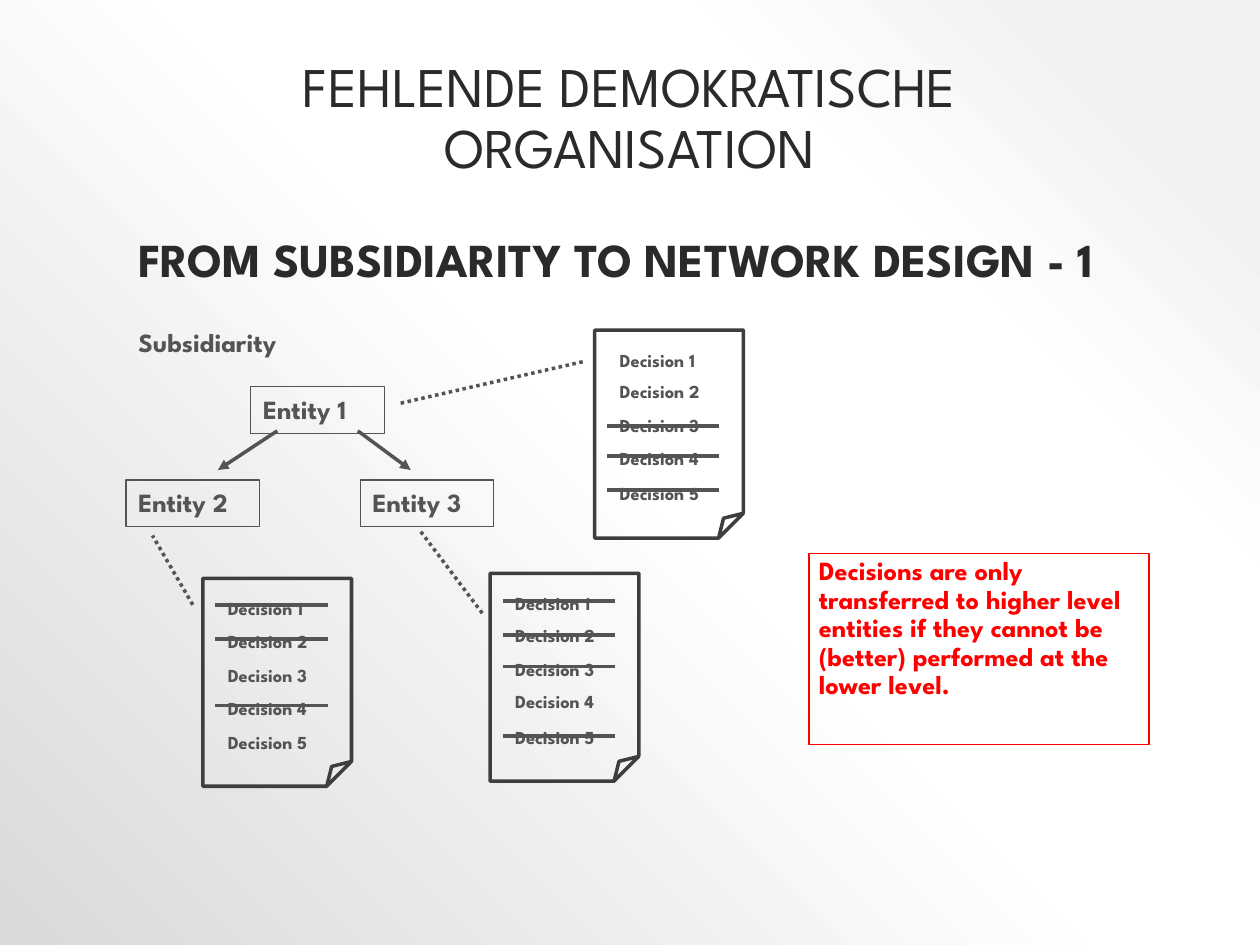
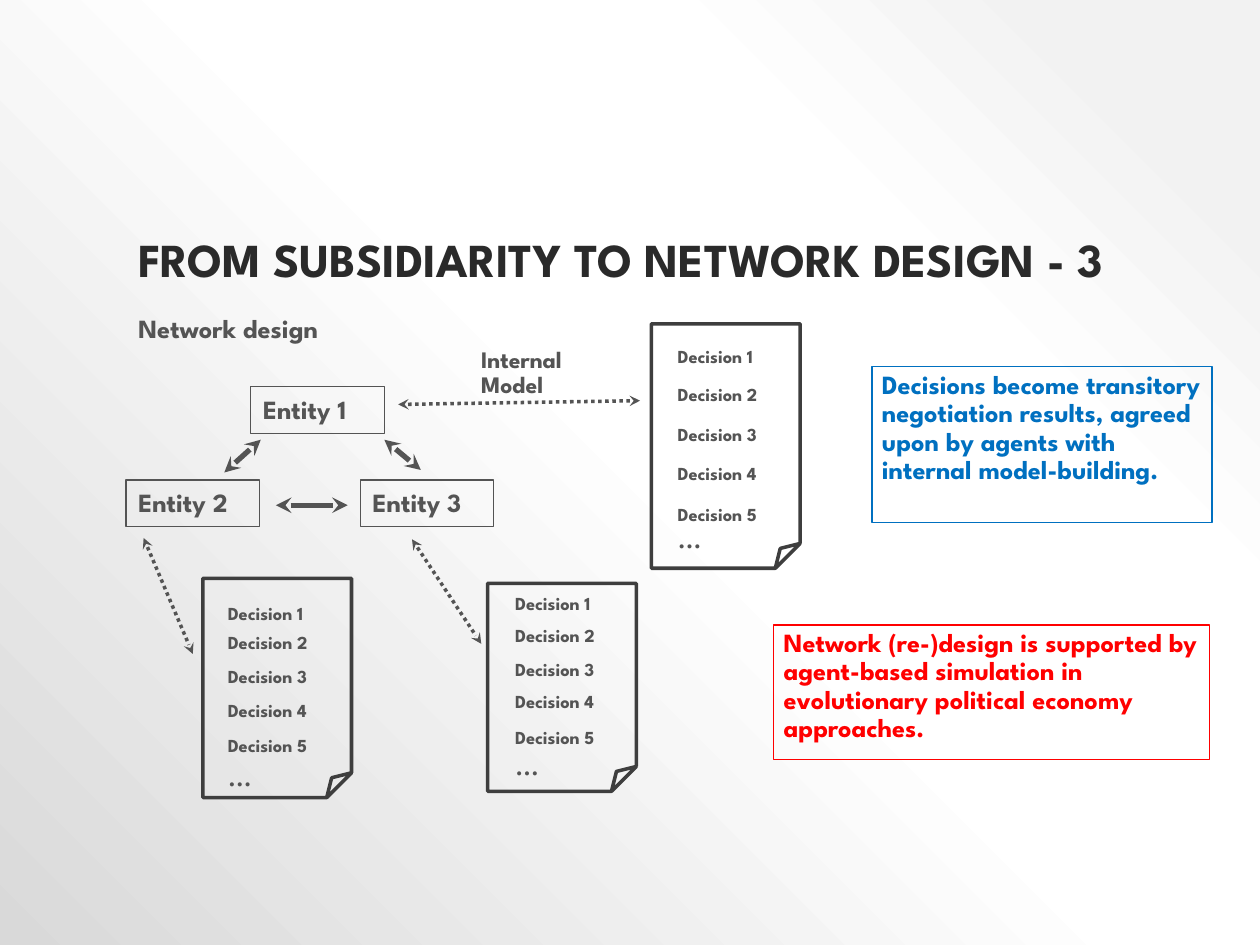
from lxml import etree
from pptx import Presentation
from pptx import oxml
from pptx.dml.color import RGBColor
from pptx.enum import dml, shapes, text
from pptx.oxml import ns
from pptx.util import Inches, Pt

FONT = "League Spartan"
DARK = RGBColor(0x2A, 0x2A, 0x2A)
GRAY = RGBColor(0x54, 0x54, 0x54)
SHEET_LINE = RGBColor(0x3E, 0x3E, 0x3E)
RED = RGBColor(0xFF, 0x00, 0x00)
BLUE = RGBColor(0x00, 0x70, 0xC0)

BACKGROUND_STOPS = [(10, "F2F2F2"), (28, "FFFFFF"), (48, "FFFFFF"), (100, "D9D9D9")]
BACKGROUND = (
    f'<p:bg {ns.nsdecls("p", "a")}><p:bgPr><a:gradFill rotWithShape="1"><a:gsLst>'
    + "".join(f'<a:gs pos="{position * 1000}"><a:srgbClr val="{color}"/></a:gs>'
              for position, color in BACKGROUND_STOPS)
    + '</a:gsLst><a:path path="circle"><a:fillToRect l="100000" b="100000"/></a:path>'
    '</a:gradFill><a:effectLst/></p:bgPr></p:bg>'
)

ENTITIES = [("Entity 1", 1.99, 3.07), ("Entity 2", 1, 3.81), ("Entity 3", 2.86, 3.81)]

# Sheets: frame, left edge of the text, tops of the decisions,
# heights of the strike lines, top of the ellipsis
# Links: start, end, width, dotted, arrowhead at start, arrowhead at end
SLIDES = [
    {
        "heading": "FROM SUBSIDIARITY TO NETWORK DESIGN - 1",
        "label": ("Subsidiarity", (1, 2.57, 1.8, 0.35)),
        "sheets": [
            ((4.72, 2.62, 1.18, 1.65), 4.82, [2.74, 2.99, 3.26, 3.52, 3.8],
             [3.38, 3.62, 3.89], None),
            ((3.89, 4.55, 1.18, 1.65), 3.99, [4.67, 4.92, 5.19, 5.45, 5.73],
             [4.77, 5.04, 5.29, 5.84], None),
            ((1.61, 4.59, 1.18, 1.65), 1.71, [4.71, 4.97, 5.24, 5.5, 5.77],
             [4.8, 5.07, 5.6], None),
        ],
        "links": [
            ((2.2, 3.42), (1.73, 3.73), 2, False, None, "triangle"),
            ((2.84, 3.42), (3.26, 3.73), 2, False, None, "triangle"),
            ((3.18, 3.2), (4.63, 2.87), 2, True, None, None),
            ((3.34, 4.22), (3.83, 4.87), 2, True, None, None),
            ((1.53, 4.8), (1.21, 4.25), 2, True, None, None),
        ],
        "notes": [
            ("Decisions are only transferred to higher level entities if they "
             "cannot be (better) performed at the lower level.",
             (6.42, 4.39, 2.7, 1.52), RED),
        ],
    },
    {
        "heading": "FROM SUBSIDIARITY TO NETWORK DESIGN - 3",
        "label": ("Network design", (1, 2.46, 1.83, 0.4)),
        "sheets": [
            ((5.17, 2.57, 1.18, 1.94), 5.28, [2.71, 3.01, 3.33, 3.64, 3.96], [], 4.09),
            ((3.87, 4.63, 1.18, 1.65), 3.99, [4.67, 4.92, 5.19, 5.45, 5.73], [], 5.89),
            ((1.61, 4.59, 1.18, 1.74), 1.71, [4.75, 4.98, 5.25, 5.52, 5.8], [], 5.98),
        ],
        "links": [
            ((3.16, 3.21), (5.08, 3.18), 2, True, "stealth", "stealth"),
            ((3.05, 3.49), (3.34, 3.73), 3, False, "stealth", "stealth"),
            ((1.78, 3.75), (2.07, 3.49), 3, False, "stealth", "stealth"),
            ((2.19, 4.01), (2.76, 4.01), 3, False, "stealth", "stealth"),
            ((1.14, 4.27), (1.53, 5.19), 2, True, "stealth", "stealth"),
            ((3.27, 4.28), (3.82, 5.11), 2, True, "stealth", "stealth"),
        ],
        "notes": [
            ("Decisions become transitory negotiation results, agreed upon by "
             "agents with internal model-building.", (6.92, 2.91, 2.7, 1.24), BLUE),
            ("Network (re-)design is supported by agent-based simulation in "
             "evolutionary political economy approaches.",
             (6.14, 4.96, 3.46, 1.07), RED),
        ],
    },
]


def add_text(slide, content, box, size, color=GRAY, bold=True, framed=False):
    position = [Inches(value) for value in box]
    if framed:
        shape = slide.shapes.add_shape(shapes.MSO_SHAPE.RECTANGLE, *position)
        shape.shadow.inherit = False
        shape.fill.background()
        shape.line.color.rgb = color
        shape.line.width = Pt(0.75)
    else:
        shape = slide.shapes.add_textbox(*position)
    frame = shape.text_frame
    frame.text = content
    frame.word_wrap = True
    frame.vertical_anchor = text.MSO_ANCHOR.TOP
    paragraph = frame.paragraphs[0]
    paragraph.alignment = text.PP_ALIGN.LEFT
    paragraph.line_spacing = 0.9
    font = paragraph.runs[0].font
    font.name, font.size, font.bold = FONT, Pt(size), bold
    font.color.rgb = color
    return frame


def add_line(slide, start, end, width=2, dotted=False, head=None, tail=None):
    connector = slide.shapes.add_connector(
        shapes.MSO_CONNECTOR.STRAIGHT, *[Inches(value) for value in start + end])
    connector.line.color.rgb = GRAY
    connector.line.width = Pt(width)
    if dotted:
        connector.line.dash_style = dml.MSO_LINE.ROUND_DOT
    outline = connector.line._get_or_add_ln()
    for tag, arrow in [("a:headEnd", head), ("a:tailEnd", tail)]:
        if arrow:
            etree.SubElement(outline, ns.qn(tag), type=arrow)
    etree.SubElement(connector._element.spPr, ns.qn("a:effectLst"))


presentation = Presentation()
presentation.slide_width = Inches(10)
presentation.slide_height = Inches(7.5)

for content in SLIDES:
    slide = presentation.slides.add_slide(presentation.slide_layouts[6])
    slide.element.cSld.insert(0, oxml.parse_xml(BACKGROUND))

    # Heading and label
    heading = add_text(slide, content["heading"], (1, 1.62, 8.24, 0.71), 27, DARK)
    heading.vertical_anchor = text.MSO_ANCHOR.BOTTOM
    add_text(slide, *content["label"], 15)

    # Entities
    for name, left, top in ENTITIES:
        entity = add_text(slide, name, (left, top, 1.06, 0.37), 15, framed=True)
        entity.margin_top = Inches(0.08)

    # Decision sheets
    for frame, text_left, rows, strikes, ellipsis_top in content["sheets"]:
        sheet = slide.shapes.add_shape(
            shapes.MSO_SHAPE.FOLDED_CORNER, *[Inches(value) for value in frame])
        sheet.shadow.inherit = False
        sheet.fill.background()
        sheet.line.color.rgb = SHEET_LINE
        sheet.line.width = Pt(2)
        for number, top in enumerate(rows, start=1):
            add_text(slide, f"Decision {number}", (text_left, top, 0.89, 0.42), 10.5)
        for height in strikes:
            add_line(slide, (text_left, height), (text_left + 0.89, height))
        if ellipsis_top:
            add_text(slide, "…", (text_left, ellipsis_top, 0.45, 0.37), 18, bold=False)

    # Links between entities and sheets
    for link in content["links"]:
        add_line(slide, *link)

    # Framed notes
    for note_text, box, color in content["notes"]:
        note = add_text(slide, note_text, box, 15, color, framed=True)
        note.margin_left = note.margin_right = Inches(0.08)
        note.margin_top = note.margin_bottom = Inches(0.04)

# Texts that only one slide has
first_slide, second_slide = presentation.slides
title = add_text(first_slide, "FEHLENDE DEMOKRATISCHE ORGANISATION",
                 (1, 0.3, 8, 1.18), 32, DARK, bold=False)
title.vertical_anchor = text.MSO_ANCHOR.BOTTOM
title.paragraphs[0].alignment = text.PP_ALIGN.CENTER
add_text(second_slide, "Internal Model", (3.72, 2.71, 1.06, 0.51), 13.5)

presentation.save("out.pptx")
